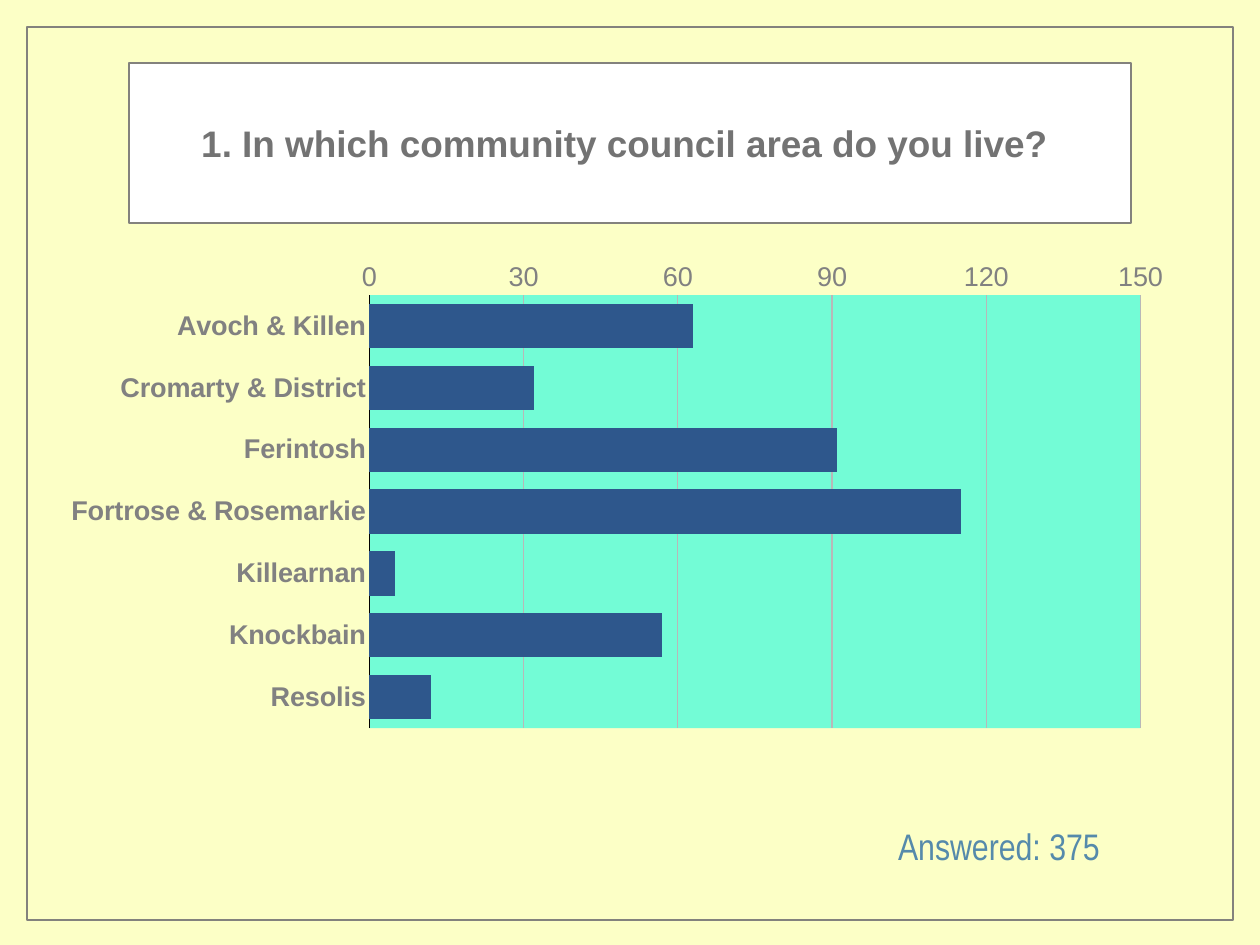
from dataclasses import dataclass

from lxml.etree import SubElement
from pptx import Presentation
from pptx.chart.data import CategoryChartData
from pptx.dml.color import RGBColor
from pptx.enum.chart import XL_AXIS_CROSSES, XL_CHART_TYPE, XL_TICK_MARK
from pptx.enum.shapes import MSO_SHAPE
from pptx.enum.text import MSO_ANCHOR, MSO_AUTO_SIZE, PP_ALIGN
from pptx.oxml import parse_xml
from pptx.oxml.ns import nsdecls, qn
from pptx.util import Emu, Pt

PX = 10320  # EMU per px
SLIDE_W, SLIDE_H = 1260, 945


@dataclass(frozen=True)
class Theme:
    background: str = "FCFFC6"
    panel: str = "FFFFFF"
    border: str = "83827D"
    title: str = "737373"
    accent: str = "558AAB"
    axis_text: str = "818181"
    axis_line: str = "000000"
    grid: str = "B8B8B8"
    plot: str = "73FCD6"
    bar: str = "2E578C"
    font: str = "Arial"
    narrow_font: str = "Arial Narrow"
    heading_size: int = 30
    axis_size: int = 22
    chart_size: int = 10
    border_width: int = 2
    axis_width: int = 1


THEME = Theme()

RESPONSES = {
    "Avoch & Killen": 63,
    "Cromarty & District": 32,
    "Ferintosh": 91,
    "Fortrose & Rosemarkie": 115,
    "Killearnan": 5,
    "Knockbain": 57,
    "Resolis": 12,
}


def px(*lengths):
    return [Emu(n * PX) for n in lengths]


def rgb(color):
    return RGBColor.from_string(color)


def set_fill(fill, color):
    fill.solid()
    fill.fore_color.rgb = rgb(color)


def set_line(line, color, width):
    set_fill(line.fill, color)
    line.width = Pt(width)


def set_font(font, name, size, color, bold=False):
    font.name = name
    font.size = Pt(size)
    font.bold = bold
    font.color.rgb = rgb(color)


def write_centred(sp, text, font_name, color, auto_size, bold=False):
    tf = sp.text_frame
    tf.word_wrap = True
    tf.auto_size = auto_size
    tf.vertical_anchor = MSO_ANCHOR.MIDDLE
    tf.margin_left, tf.margin_top, tf.margin_right, tf.margin_bottom = px(5, 5, 5, 5)
    p = tf.paragraphs[0]
    p.alignment = PP_ALIGN.CENTER
    r = p.add_run()
    r.text = text
    set_font(r.font, font_name, THEME.heading_size, color, bold)


def add_frame(s, x, y, w, h):
    sp = s.shapes.add_shape(MSO_SHAPE.RECTANGLE, *px(x, y, w, h))
    sp.shadow.inherit = False
    sp.fill.background()
    set_line(sp.line, THEME.border, THEME.border_width)


def fill_title(s, text, x, y, w, h):
    sp = s.shapes.title
    sp.left, sp.top, sp.width, sp.height = px(x, y, w, h)
    set_fill(sp.fill, THEME.panel)
    set_line(sp.line, THEME.border, THEME.border_width)
    write_centred(sp, text, THEME.font, THEME.title, MSO_AUTO_SIZE.NONE, bold=True)


def add_label(s, text, x, y, w, h):
    sp = s.shapes.add_textbox(*px(x, y, w, h))
    write_centred(sp, text, THEME.narrow_font, THEME.accent,
                  MSO_AUTO_SIZE.SHAPE_TO_FIT_TEXT)


def format_axis(axis, bold=False):
    axis.major_tick_mark = XL_TICK_MARK.NONE
    axis.minor_tick_mark = XL_TICK_MARK.NONE
    set_font(axis.tick_labels.font, THEME.font, THEME.axis_size, THEME.axis_text, bold)


def format_plot_area(chart, x, y, w, h):
    """Fix the inner plot area, in fractions of the chart, and fill it."""
    plot_area = chart._chartSpace.chart.plotArea
    for old in plot_area.findall(qn("c:layout")):
        plot_area.remove(old)
    layout = parse_xml(f'<c:layout {nsdecls("c")}/>')
    plot_area.insert(0, layout)
    manual = SubElement(layout, qn("c:manualLayout"))
    settings = {"layoutTarget": "inner", "xMode": "edge", "yMode": "edge",
                "x": x, "y": y, "w": w, "h": h}
    for tag, value in settings.items():
        SubElement(manual, qn(f"c:{tag}")).set("val", str(value))
    plot_area.append(parse_xml(
        f'<c:spPr {nsdecls("c", "a")}><a:solidFill><a:srgbClr val="{THEME.plot}"/>'
        '</a:solidFill><a:ln><a:noFill/></a:ln></c:spPr>'))


def clear_chart_background(chart):
    """Let the slide show through; the chart font must be set already."""
    chart._chartSpace.find(qn("c:txPr")).addprevious(parse_xml(
        f'<c:spPr {nsdecls("c", "a")}><a:noFill/><a:ln><a:noFill/></a:ln></c:spPr>'))


def add_bar_chart(s, values, x, y, w, h):
    data = CategoryChartData(number_format="General")
    data.categories = list(values)
    data.add_series("Series 1", list(values.values()))
    chart = s.shapes.add_chart(XL_CHART_TYPE.BAR_CLUSTERED, *px(x, y, w, h), data).chart
    chart.has_legend = False
    chart.has_title = False
    set_font(chart.font, THEME.font, THEME.chart_size, THEME.accent)
    clear_chart_background(chart)

    plot = chart.plots[0]
    plot.gap_width = 40
    plot.overlap = -10
    plot.vary_by_categories = False
    set_fill(plot.series[0].format.fill, THEME.bar)

    areas = chart.category_axis
    format_axis(areas, bold=True)
    areas.reverse_order = True
    areas.crosses = XL_AXIS_CROSSES.MAXIMUM
    set_line(areas.format.line, THEME.axis_line, THEME.axis_width)

    counts = chart.value_axis
    format_axis(counts)
    counts.minimum_scale, counts.maximum_scale, counts.major_unit = 0, 150, 30
    counts.format.line.fill.background()
    set_line(counts.major_gridlines.format.line, THEME.grid, THEME.axis_width)

    format_plot_area(chart, 0.288, 0.063, 0.691, 0.837)


def main():
    prs = Presentation()
    prs.slide_width, prs.slide_height = px(SLIDE_W, SLIDE_H)
    s = prs.slides.add_slide(prs.slide_layouts[5])
    set_fill(s.background.fill, THEME.background)
    add_frame(s, 27, 27, 1206, 893)
    fill_title(s, "1. In which community council area do you live? ", 129, 63, 1002, 160)
    add_bar_chart(s, RESPONSES, 48, 262, 1116, 518)
    add_label(s, f"Answered: {sum(RESPONSES.values())}", 829, 819, 340, 54)
    prs.save("out.pptx")


if __name__ == "__main__":
    main()
